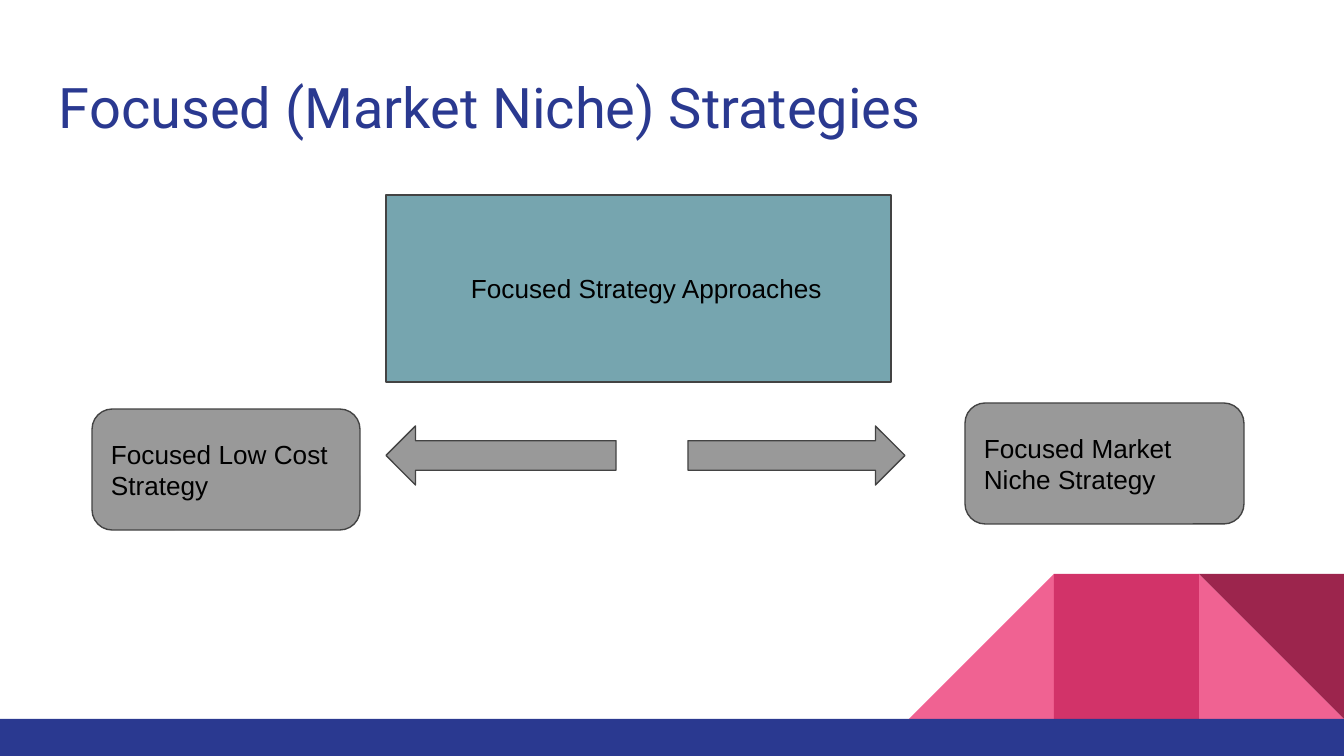
import pptx
import pptx.dml.color
import pptx.enum.shapes
import pptx.enum.text
import pptx.util

EMU_PER_PX = 914400 / 134.4
SHAPES = pptx.enum.shapes.MSO_SHAPE
ANCHOR = pptx.enum.text.MSO_ANCHOR
NAVY, TEAL, GREY, OUTLINE = "2A3990", "76A5AF", "999999", "434343"
PINK, ROSE, WINE = "F06292", "D23369", "9C254D"


def px(length):
    return pptx.util.Emu(round(length * EMU_PER_PX))


def color(hex_code):
    return pptx.dml.color.RGBColor.from_string(hex_code)


def write(shape, text, size=14, font="Arial", fill="000000",
          anchor=ANCHOR.MIDDLE, inset=13, left_inset=13):
    frame = shape.text_frame
    frame.word_wrap = True
    frame.vertical_anchor = anchor
    frame.margin_left = px(left_inset)
    frame.margin_top = frame.margin_right = frame.margin_bottom = px(inset)
    paragraph = frame.paragraphs[0]
    paragraph.alignment = pptx.enum.text.PP_ALIGN.LEFT
    run = paragraph.add_run()
    run.text = text
    run.font.size = pptx.util.Pt(size)
    run.font.name = font
    run.font.color.rgb = color(fill)


class StrategySlide:
    def __init__(self, slide):
        self.slide = slide

    def block(self, kind, box, fill, rotation=0):
        """Add a flat preset shape without an outline."""
        shape = self.slide.shapes.add_shape(kind, *map(px, box))
        shape.shadow.inherit = False
        shape.fill.solid()
        shape.fill.fore_color.rgb = color(fill)
        shape.line.fill.background()
        shape.rotation = rotation
        return shape

    def outlined(self, kind, box, fill=GREY):
        shape = self.block(kind, box, fill)
        shape.line.color.rgb = color(OUTLINE)
        shape.line.width = pptx.util.Pt(0.75)
        return shape

    def labelled(self, kind, box, text, fill=GREY, **text_format):
        write(self.outlined(kind, box, fill), text, **text_format)

    def title(self, box, text):
        heading = self.slide.shapes.add_textbox(*map(px, box))
        write(heading, text, size=30, font="Roboto", fill=NAVY,
              anchor=ANCHOR.TOP)

    def corner_pattern(self, right, top, side):
        """Add the row of square tiles that ends at the right edge."""
        tiles = [
            (1, SHAPES.RIGHT_TRIANGLE, PINK, 0),
            (3, SHAPES.RIGHT_TRIANGLE, PINK, 270),
            (2, SHAPES.RECTANGLE, ROSE, 0),
            (1, SHAPES.RIGHT_TRIANGLE, WINE, 180),
        ]
        for place, kind, fill, rotation in tiles:
            box = (right - place * side, top, side, side)
            self.block(kind, box, fill, rotation)


def main():
    deck = pptx.Presentation()
    deck.slide_width, deck.slide_height = px(1344), px(756)
    page = StrategySlide(deck.slides.add_slide(deck.slide_layouts[6]))

    page.corner_pattern(right=1344, top=574, side=145)
    page.block(SHAPES.RECTANGLE, (0, 719, 1344, 37), NAVY)
    page.title((46, 60, 1252, 89), "Focused (Market Niche) Strategies")

    page.labelled(SHAPES.RECTANGLE, (386, 195, 505, 187),
                  "Focused Strategy Approaches", TEAL, left_inset=85)
    page.outlined(SHAPES.LEFT_ARROW, (386, 426, 230, 59))
    page.outlined(SHAPES.RIGHT_ARROW, (688, 426, 217, 59))
    page.labelled(SHAPES.ROUNDED_RECTANGLE, (92, 409, 268, 121),
                  "Focused Low Cost Strategy")
    page.labelled(SHAPES.ROUNDED_RECTANGLE, (965, 403, 279, 121),
                  "Focused Market Niche Strategy")

    deck.save("out.pptx")


if __name__ == "__main__":
    main()
